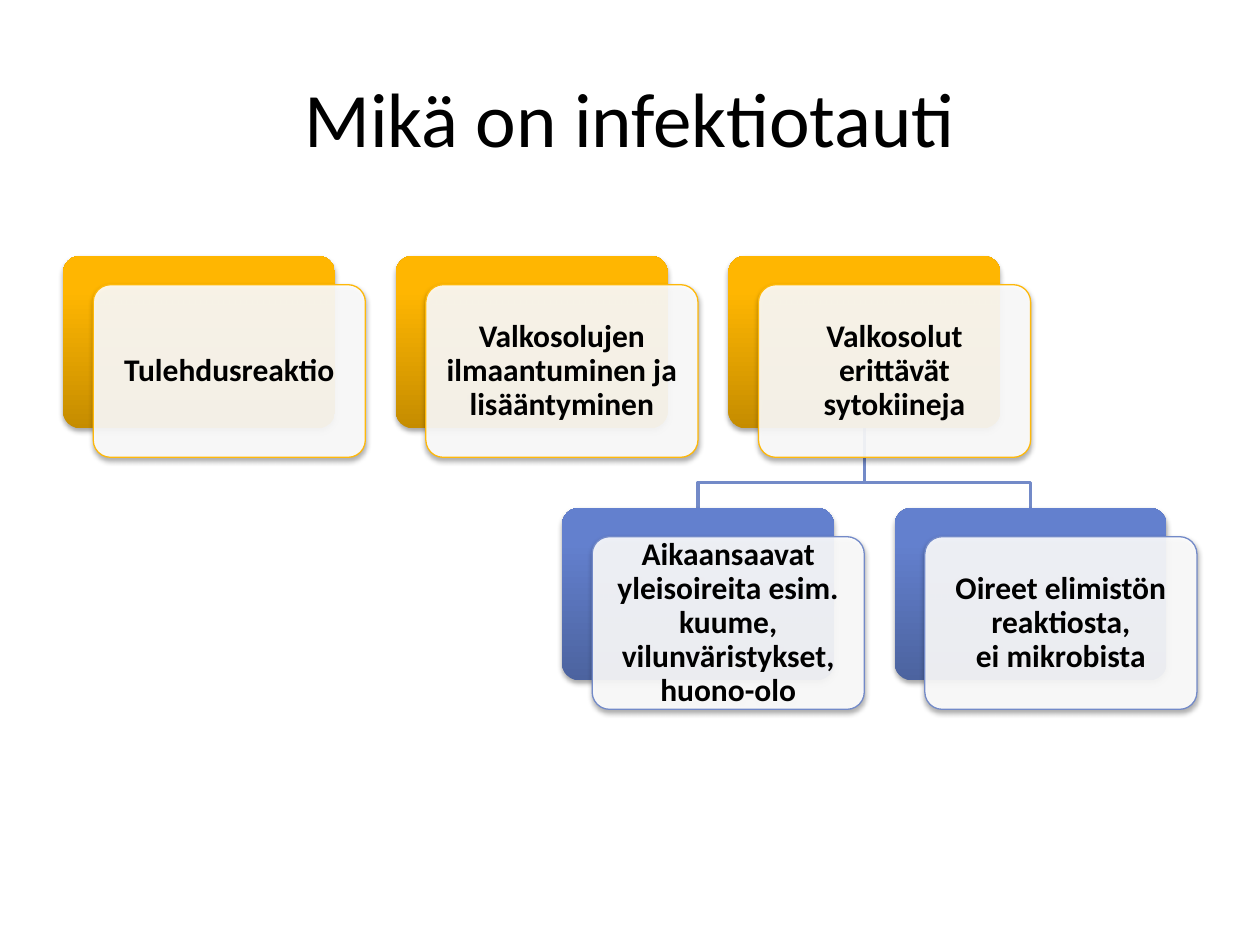
from dataclasses import dataclass

from lxml.etree import SubElement
from pptx import Presentation
from pptx.dml.color import RGBColor
from pptx.enum.shapes import MSO_SHAPE
from pptx.enum.text import MSO_ANCHOR, PP_ALIGN
from pptx.oxml import parse_xml
from pptx.oxml.ns import nsdecls, qn
from pptx.shapes.autoshape import Shape
from pptx.slide import Slide
from pptx.text.text import TextFrame
from pptx.util import Inches, Pt

CARD_W, CARD_H = 2.16, 1.37
OFFSET_X, OFFSET_Y = 0.24, 0.23
LEFT, PITCH = 0.5, 2.64
TOP_ROW, LOWER_ROW = 2.03, 4.03
BRANCH_Y = 3.83
FONT = "Calibri"


@dataclass(frozen=True)
class Theme:
    outline: str
    gradient: tuple[tuple[int, str], ...]


@dataclass(frozen=True)
class Card:
    column: float
    top: float
    text: str
    theme: Theme

    @property
    def left(self) -> float:
        return LEFT + self.column * PITCH

    @property
    def center(self) -> float:
        return self.left + CARD_W / 2


AMBER = Theme("FEB80A", ((0, "C58C00"), (80, "FFB601"), (100, "FFB602")))
BLUE = Theme("738AC8", ((0, "4C639F"), (80, "6380CE"), (100, "6180D1")))

CAUSES = [
    Card(0, TOP_ROW, "Tulehdusreaktio", AMBER),
    Card(1, TOP_ROW, "Valkosolujen ilmaantuminen ja lisääntyminen", AMBER),
    Card(2, TOP_ROW, "Valkosolut erittävät sytokiineja", AMBER),
]
EFFECTS = [
    Card(1.5, LOWER_ROW, "Aikaansaavat yleisoireita esim. kuume, "
         "vilunväristykset, huono-olo", BLUE),
    Card(2.5, LOWER_ROW, "Oireet elimistön reaktiosta,\vei mikrobista", BLUE),
]


def color(value: str) -> RGBColor:
    return RGBColor.from_string(value)


def write(frame: TextFrame, text: str, size: float, bold: bool = False) -> None:
    """Fill the frame with one centred paragraph; \\v marks a line break."""
    frame.word_wrap = True
    frame.vertical_anchor = MSO_ANCHOR.MIDDLE
    paragraph = frame.paragraphs[0]
    paragraph.alignment = PP_ALIGN.CENTER
    for index, line in enumerate(text.split("\v")):
        if index:
            paragraph.add_line_break()
        run = paragraph.add_run()
        run.text = line
        run.font.name = FONT
        run.font.size = Pt(size)
        run.font.bold = bold
        run.font.color.rgb = color("000000")


def set_gradient(shape: Shape, theme: Theme) -> None:
    stops = "".join(
        f'<a:gs pos="{position * 1000}"><a:srgbClr val="{value}"/></a:gs>'
        for position, value in theme.gradient
    )
    gradient = parse_xml(
        f'<a:gradFill {nsdecls("a")} rotWithShape="1"><a:gsLst>{stops}</a:gsLst>'
        f'<a:lin ang="{270 * 60000}" scaled="0"/></a:gradFill>'
    )
    shape._element.spPr.find(qn("a:prstGeom")).addnext(gradient)


def add_shadow(shape: Shape) -> None:
    shape.shadow.inherit = False
    effects = shape._element.spPr.find(qn("a:effectLst"))
    effects.append(parse_xml(
        f'<a:outerShdw {nsdecls("a")} blurRad="{Pt(3.1)}" dist="{Pt(1.8)}" '
        f'dir="{90 * 60000}" rotWithShape="0">'
        '<a:srgbClr val="000000"><a:alpha val="35000"/></a:srgbClr></a:outerShdw>'
    ))


def add_panel(slide: Slide, left: float, top: float) -> Shape:
    panel = slide.shapes.add_shape(
        MSO_SHAPE.ROUNDED_RECTANGLE,
        Inches(left), Inches(top), Inches(CARD_W), Inches(CARD_H),
    )
    panel.adjustments[0] = 0.1
    add_shadow(panel)
    return panel


def add_card(slide: Slide, card: Card) -> None:
    """Draw a gradient panel with a translucent text panel in front."""
    back = add_panel(slide, card.left, card.top)
    set_gradient(back, card.theme)
    back.line.fill.background()

    front = add_panel(slide, card.left + OFFSET_X, card.top + OFFSET_Y)
    front.fill.solid()
    front.fill.fore_color.rgb = color("FFFFFF")
    white = front._element.spPr.find(qn("a:solidFill"))[0]
    SubElement(white, qn("a:alpha")).set("val", "90000")
    front.line.color.rgb = color(card.theme.outline)
    front.line.width = Pt(0.75)

    frame = front.text_frame
    frame.margin_left = frame.margin_right = Inches(0.07)
    frame.margin_top = frame.margin_bottom = Inches(0.07)
    write(frame, card.text, 18, bold=True)
    frame.paragraphs[0].line_spacing = 0.9


def add_branch(slide: Slide, parent: Card, child: Card) -> None:
    builder = slide.shapes.build_freeform(
        Inches(parent.center), Inches(parent.top + CARD_H))
    corners = [(parent.center, BRANCH_Y), (child.center, BRANCH_Y),
               (child.center, child.top)]
    builder.add_line_segments(
        [(Inches(x), Inches(y)) for x, y in corners], close=False)
    branch = builder.convert_to_shape()
    branch.shadow.inherit = False
    branch.fill.background()
    branch.line.color.rgb = color(child.theme.outline)
    branch.line.width = Pt(2)


def main() -> None:
    presentation = Presentation()
    presentation.slide_width = Inches(10)
    presentation.slide_height = Inches(7.5)
    slide = presentation.slides.add_slide(presentation.slide_layouts[5])

    title = slide.shapes.title
    title.left, title.top = Inches(0.5), Inches(0.3)
    title.width, title.height = Inches(9), Inches(1.25)
    write(title.text_frame, "Mikä on infektiotauti", 44)

    for effect in reversed(EFFECTS):
        add_branch(slide, CAUSES[-1], effect)
    for card in CAUSES + EFFECTS:
        add_card(slide, card)

    presentation.save("out.pptx")


if __name__ == "__main__":
    main()
